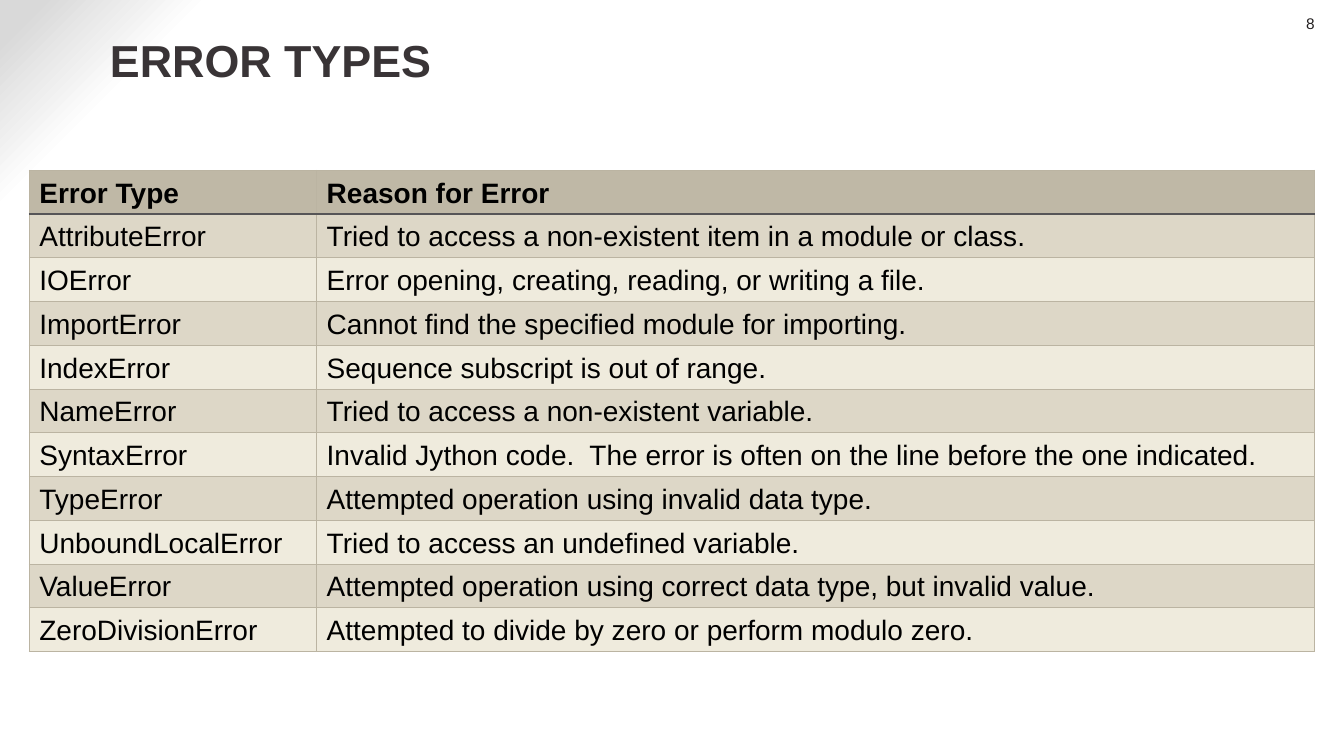
from typing import NamedTuple

from pptx import Presentation
from pptx.dml.color import RGBColor
from pptx.enum.text import MSO_ANCHOR, PP_ALIGN
from pptx.oxml import parse_xml
from pptx.oxml.ns import nsdecls, qn
from pptx.slide import Slide
from pptx.table import _Cell
from pptx.text.text import TextFrame
from pptx.util import Inches, Pt

FONT = "Arial"
HEADER_FILL = "BFB8A6"
BAND_FILLS = ("DDD7C7", "EFEBDD")


class ErrorType(NamedTuple):
    name: str
    reason: str


class Border(NamedTuple):
    color: str
    points: float


GRID = Border("BBB4A2", 0.75)
HEADER_RULE = Border("565557", 2)

HEADINGS = ErrorType("Error Type", "Reason for Error")
ERROR_TYPES = [
    ErrorType("AttributeError", "Tried to access a non-existent item in a module or class."),
    ErrorType("IOError", "Error opening, creating, reading, or writing a file."),
    ErrorType("ImportError", "Cannot find the specified module for importing."),
    ErrorType("IndexError", "Sequence subscript is out of range."),
    ErrorType("NameError", "Tried to access a non-existent variable."),
    ErrorType("SyntaxError", "Invalid Jython code.  The error is often on the line before the one indicated."),
    ErrorType("TypeError", "Attempted operation using invalid data type."),
    ErrorType("UnboundLocalError", "Tried to access an undefined variable."),
    ErrorType("ValueError", "Attempted operation using correct data type, but invalid value."),
    ErrorType("ZeroDivisionError", "Attempted to divide by zero or perform modulo zero."),
]


def rgb(color: str) -> RGBColor:
    return RGBColor.from_string(color)


def write(frame: TextFrame, text: str, size: float, color: str,
          bold: bool = False, align: PP_ALIGN = PP_ALIGN.LEFT) -> None:
    frame.text = text
    paragraph = frame.paragraphs[0]
    paragraph.alignment = align
    font = paragraph.runs[0].font
    font.name, font.size, font.bold = FONT, Pt(size), bold
    font.color.rgb = rgb(color)


def set_margins(frame: TextFrame, left: float) -> None:
    frame.margin_left = Inches(left)
    frame.margin_top = frame.margin_right = frame.margin_bottom = 0


def set_borders(cell: _Cell, top: Border, bottom: Border) -> None:
    properties = cell._tc.get_or_add_tcPr()
    sides = {"lnL": GRID, "lnR": GRID, "lnT": top, "lnB": bottom}
    for position, (tag, border) in enumerate(sides.items()):
        properties.insert(position, parse_xml(
            f'<a:{tag} {nsdecls("a")} w="{Pt(border.points)}"><a:solidFill>'
            f'<a:srgbClr val="{border.color}"/></a:solidFill></a:{tag}>'))


def add_corner_gradient(slide: Slide) -> None:
    """Fill the background with white that turns grey in the top left corner."""
    slide.background.fill.solid()
    background = slide.element.find(f".//{qn('p:bgPr')}")
    stops = "".join(
        f'<a:gs pos="{percent * 1000}"><a:srgbClr val="{color}"/></a:gs>'
        for percent, color in ((87, "FFFFFF"), (90, "FFFFFF"), (98, "D9D9D9")))
    background.replace(background[0], parse_xml(
        f'<a:gradFill {nsdecls("a")} rotWithShape="1"><a:gsLst>{stops}</a:gsLst>'
        '<a:path path="circle"><a:fillToRect l="100000" t="100000"/></a:path>'
        '</a:gradFill>'))


def add_title(slide: Slide) -> None:
    title = slide.shapes.title
    title.left, title.top = Inches(1.04), Inches(0.14)
    title.width, title.height = Inches(11.36), Inches(0.91)
    frame = title.text_frame
    set_margins(frame, 0.05)
    frame.vertical_anchor = MSO_ANCHOR.MIDDLE
    write(frame, "ERROR TYPES", 32, "393436", bold=True)


def add_page_number(slide: Slide) -> None:
    box = slide.shapes.add_textbox(Inches(12.44), Inches(0.14), Inches(0.6), Inches(0.19))
    box.text_frame.word_wrap = True
    set_margins(box.text_frame, 0.1)
    write(box.text_frame, "8", 11, "221F20", align=PP_ALIGN.RIGHT)


def add_error_table(slide: Slide) -> None:
    entries = [HEADINGS, *ERROR_TYPES]
    table = slide.shapes.add_table(
        len(entries), len(HEADINGS),
        Inches(0.29), Inches(1.69), Inches(12.75), Inches(4.77)).table
    table.horz_banding = False
    for column, width in zip(table.columns, (2.85, 9.9)):
        column.width = Inches(width)
    for row, entry in enumerate(entries):
        is_header = row == 0
        for column, text in enumerate(entry):
            cell = table.cell(row, column)
            cell.vertical_anchor = MSO_ANCHOR.BOTTOM
            cell.fill.solid()
            cell.fill.fore_color.rgb = rgb(HEADER_FILL if is_header else BAND_FILLS[(row - 1) % 2])
            set_borders(cell, top=HEADER_RULE if row == 1 else GRID,
                        bottom=HEADER_RULE if is_header else GRID)
            write(cell.text_frame, text, 20, "000000", bold=is_header)


def main() -> None:
    presentation = Presentation()
    presentation.slide_width, presentation.slide_height = Inches(13.33), Inches(7.5)
    slide = presentation.slides.add_slide(presentation.slide_layouts.get_by_name("Title Only"))
    add_corner_gradient(slide)
    add_page_number(slide)
    add_error_table(slide)
    add_title(slide)
    presentation.save("out.pptx")


if __name__ == "__main__":
    main()
